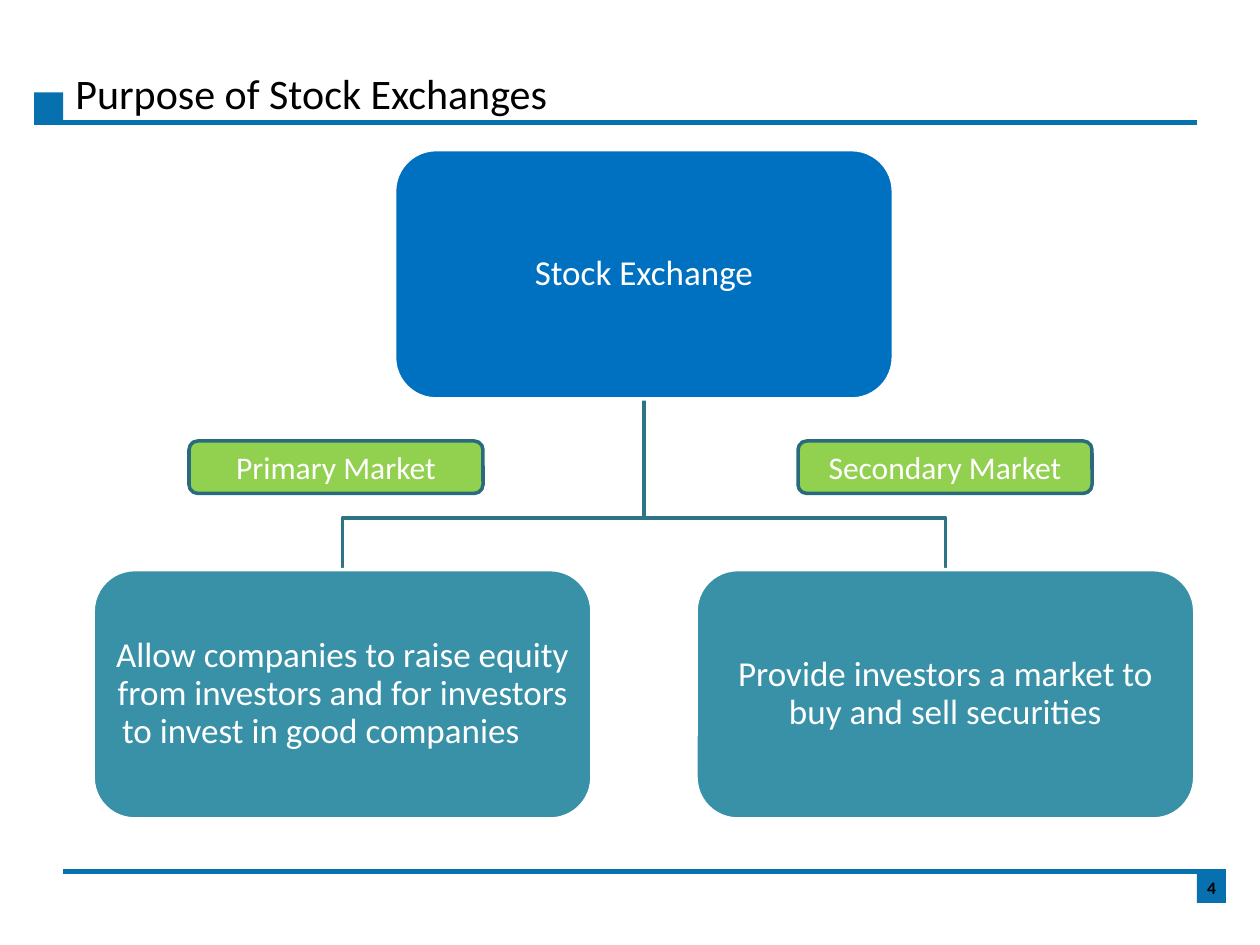
from dataclasses import dataclass

from lxml import etree
from pptx import Presentation
from pptx.dml.color import RGBColor
from pptx.enum.shapes import MSO_CONNECTOR, MSO_SHAPE
from pptx.enum.text import MSO_ANCHOR, PP_ALIGN
from pptx.oxml.ns import qn
from pptx.util import Pt

RECT, ROUNDED = MSO_SHAPE.RECTANGLE, MSO_SHAPE.ROUNDED_RECTANGLE
STRAIGHT = MSO_CONNECTOR.STRAIGHT
MIDDLE, BOTTOM = MSO_ANCHOR.MIDDLE, MSO_ANCHOR.BOTTOM
CENTER, LEFT = PP_ALIGN.CENTER, PP_ALIGN.LEFT


@dataclass(frozen=True)
class Theme:
    font: str = "Calibri"
    rule: str = "0771B0"
    root: str = "0070C0"
    purpose: str = "3891A7"
    branch: str = "2D7486"
    market: str = "92D050"
    market_edge: str = "296B7C"
    light: str = "FFFFFF"
    dark: str = "000000"
    title_size: float = 24
    card_size: float = 20
    market_size: float = 18
    number_size: float = 10
    rule_width: float = 2.5
    edge_width: float = 2


THEME = Theme()

# Layout, in points
CARD_W, CARD_H = 285, 142.5
ROOT_X, ROOT_Y = 368, 85.5
PURPOSE_Y = 325.5
BRANCH_Y = 296
BRANCH_OFFSET = 172.25
MARKET_W, MARKET_H, MARKET_Y = 168, 30, 252
MARKER_W, MARKER_H = 16.6, 18


def rgb(value):
    return RGBColor.from_string(value)


def set_text(shape, text, size, color, bold=False, align=CENTER,
             anchor=MIDDLE, spacing=None, inset=None, wrap=True):
    frame = shape.text_frame
    frame.word_wrap = wrap
    frame.vertical_anchor = anchor
    if inset is not None:
        frame.margin_left = frame.margin_right = Pt(inset)
        frame.margin_top = frame.margin_bottom = Pt(inset)
    paragraph = frame.paragraphs[0]
    paragraph.alignment = align
    if spacing:
        paragraph.line_spacing = spacing
    run = paragraph.add_run()
    run.text = text
    run.font.name = THEME.font
    run.font.size = Pt(size)
    run.font.bold = bold
    run.font.color.rgb = rgb(color)


def add_block(slide, kind, x, y, width, height, fill, edge=None):
    block = slide.shapes.add_shape(kind, Pt(x), Pt(y), Pt(width), Pt(height))
    block.shadow.inherit = False
    block.fill.solid()
    block.fill.fore_color.rgb = rgb(fill)
    if edge:
        block.line.color.rgb = rgb(edge)
        block.line.width = Pt(THEME.edge_width)
    else:
        block.line.fill.background()
    return block


def add_rule(slide, x1, x2, y):
    rule = slide.shapes.add_connector(STRAIGHT, Pt(x1), Pt(y), Pt(x2), Pt(y))
    rule.line.color.rgb = rgb(THEME.rule)
    rule.line.width = Pt(THEME.rule_width)
    etree.SubElement(rule._element.spPr, qn("a:effectLst"))


def add_branch(slide, center_x):
    """Stepped line from the root card down to a purpose card."""
    builder = slide.shapes.build_freeform(Pt(ROOT_X), Pt(ROOT_Y + CARD_H))
    steps = [(ROOT_X, BRANCH_Y), (center_x, BRANCH_Y), (center_x, PURPOSE_Y)]
    builder.add_line_segments([(Pt(x), Pt(y)) for x, y in steps], close=False)
    branch = builder.convert_to_shape()
    branch.shadow.inherit = False
    branch.fill.background()
    branch.line.color.rgb = rgb(THEME.branch)
    branch.line.width = Pt(THEME.edge_width)


def add_card(slide, center_x, y, text, fill):
    card = add_block(slide, ROUNDED, center_x - CARD_W / 2, y,
                     CARD_W, CARD_H, fill, THEME.light)
    set_text(card, text, THEME.card_size, THEME.light, spacing=0.9, inset=1)


def add_market(slide, x, text):
    market = add_block(slide, ROUNDED, x, MARKET_Y, MARKET_W, MARKET_H,
                       THEME.market, THEME.market_edge)
    set_text(market, text, THEME.market_size, THEME.light)


def main():
    prs = Presentation()
    prs.slide_width, prs.slide_height = Pt(720), Pt(540)
    slide = prs.slides.add_slide(prs.slide_layouts[6])

    # Header
    add_rule(slide, 19.5, 684, 70)
    add_block(slide, RECT, 19.5, 52.75, MARKER_W, MARKER_H, THEME.rule)
    title = slide.shapes.add_textbox(Pt(36), Pt(11.5), Pt(546), Pt(59.75))
    set_text(title, "Purpose of Stock Exchanges", THEME.title_size, THEME.dark,
             align=LEFT, anchor=BOTTOM, spacing=0.9)

    # Footer
    add_rule(slide, 36, 700.5, 498)
    page_number = add_block(slide, RECT, 684, 498, MARKER_W, MARKER_H, THEME.rule)
    set_text(page_number, "4", THEME.number_size, THEME.dark, bold=True,
             inset=0, wrap=False)

    # Hierarchy: branches lie behind the cards
    purposes = [
        (ROOT_X - BRANCH_OFFSET, "Allow companies to raise equity from investors "
                                 "and for investors to invest in good companies\t"),
        (ROOT_X + BRANCH_OFFSET, "Provide investors a market to buy and sell securities"),
    ]
    for center_x, _ in reversed(purposes):
        add_branch(slide, center_x)
    add_card(slide, ROOT_X, ROOT_Y, "Stock Exchange", THEME.root)
    for center_x, purpose in purposes:
        add_card(slide, center_x, PURPOSE_Y, purpose, THEME.purpose)

    # Market labels
    for x, market_name in [(108, "Primary Market"), (456, "Secondary Market")]:
        add_market(slide, x, market_name)

    prs.save("out.pptx")


if __name__ == "__main__":
    main()
